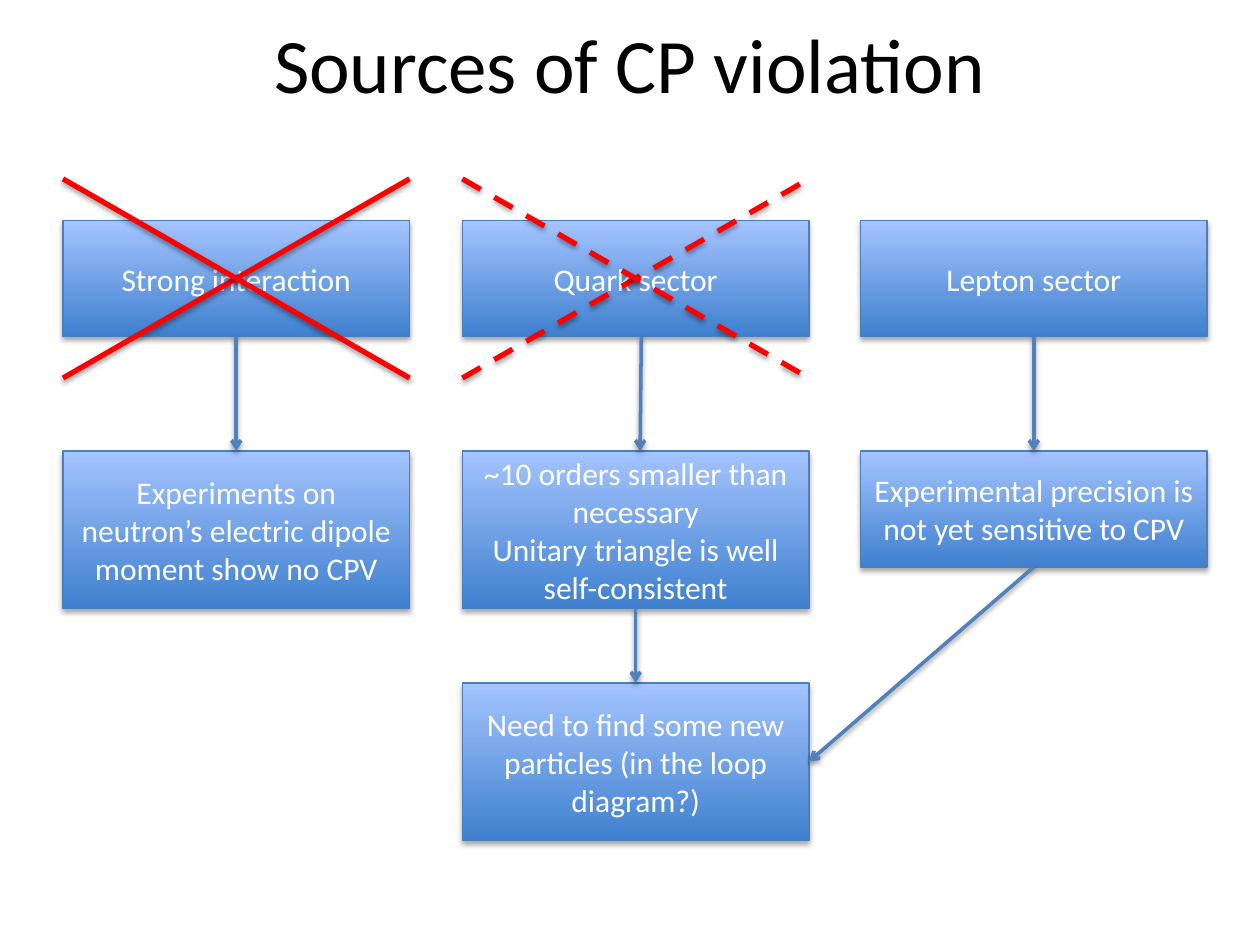
from dataclasses import dataclass

from lxml.etree import SubElement
from pptx import Presentation
from pptx.dml.color import RGBColor
from pptx.enum.dml import MSO_LINE
from pptx.enum.shapes import MSO_CONNECTOR, MSO_SHAPE
from pptx.enum.text import MSO_ANCHOR, PP_ALIGN
from pptx.oxml.ns import qn
from pptx.util import Inches, Pt

COLORS = {
    "text": "000000", "box_text": "FFFFFF", "box_bottom": "3F80CE",
    "box_top": "A4C4FF", "box_line": "4B7EBC", "arrow": "4F81BD",
    "cross": "FF0000", "shadow": "000000",
}
FONT = "Calibri"
BOX_W, SHORT_H, TALL_H = 2.75, 0.92, 1.25
LEFTS = [0.5, 3.67, 6.83]
ROWS = [1.75, 3.58, 5.42]
CROSS_TOP, CROSS_BOTTOM = 1.42, 3
TOP, BOTTOM, RIGHT = 0, 2, 3


@dataclass
class Box:
    name: str
    col: int
    row: int
    height: float
    lines: list[str]


@dataclass
class Arrow:
    start: str
    start_side: int
    end: str
    end_side: int


BOXES = [
    Box("strong", 0, 0, SHORT_H, ["Strong interaction"]),
    Box("quark", 1, 0, SHORT_H, ["Quark sector"]),
    Box("lepton", 2, 0, SHORT_H, ["Lepton sector"]),
    Box("too_small", 1, 1, TALL_H, ["~10 orders smaller than necessary",
                                    "Unitary triangle is well self-consistent"]),
    Box("precision", 2, 1, SHORT_H,
        ["Experimental precision is not yet sensitive to CPV"]),
    Box("dipole", 0, 1, TALL_H,
        ["Experiments on neutron’s electric dipole moment show no CPV"]),
    Box("new_particles", 1, 2, TALL_H,
        ["Need to find some new particles (in the loop diagram?)"]),
]
ARROWS = [
    Arrow("strong", BOTTOM, "dipole", TOP),
    Arrow("lepton", BOTTOM, "precision", TOP),
    Arrow("too_small", BOTTOM, "new_particles", TOP),
    Arrow("precision", BOTTOM, "new_particles", RIGHT),
]


def rgb(name: str) -> RGBColor:
    return RGBColor.from_string(COLORS[name])


def add_run(p, text: str, size: float, color: str) -> None:
    p.alignment = PP_ALIGN.CENTER
    r = p.add_run()
    r.text = text
    r.font.name, r.font.size = FONT, Pt(size)
    r.font.color.rgb = rgb(color)


def add_shadow(effects, alpha: int, distance: float) -> None:
    """Put a soft downward shadow into an a:effectLst; alpha in percent."""
    shadow = SubElement(effects, qn("a:outerShdw"), blurRad=str(Pt(3.1)),
                        dist=str(Pt(distance)), dir="5400000", rotWithShape="0")
    color = SubElement(shadow, qn("a:srgbClr"), val=COLORS["shadow"])
    SubElement(color, qn("a:alpha"), val=str(alpha * 1000))


def add_box(shapes, box: Box):
    sp = shapes.add_shape(MSO_SHAPE.RECTANGLE, Inches(LEFTS[box.col]),
                          Inches(ROWS[box.row]), Inches(BOX_W), Inches(box.height))
    sp.fill.gradient()
    sp.fill.gradient_angle = 90
    for stop, color in zip(sp.fill.gradient_stops, ("box_bottom", "box_top")):
        stop.color.rgb = rgb(color)
        stop.position = 0 if color == "box_bottom" else 1
    sp.line.color.rgb = rgb("box_line")
    sp.line.width = Pt(0.75)
    sp.shadow.inherit = False
    add_shadow(sp.element.spPr.find(qn("a:effectLst")), 35, 1.8)
    tf = sp.text_frame
    tf.word_wrap = True
    tf.vertical_anchor = MSO_ANCHOR.MIDDLE
    for i, line in enumerate(box.lines):
        p = tf.add_paragraph() if i else tf.paragraphs[0]
        add_run(p, line, 18, "box_text")
    return sp


def add_line(shapes, x1: float, y1: float, x2: float, y2: float, color: str,
             width: float, dash=None, arrow: bool = False):
    line = shapes.add_connector(MSO_CONNECTOR.STRAIGHT, Inches(x1), Inches(y1),
                                Inches(x2), Inches(y2))
    line.line.color.rgb = rgb(color)
    line.line.width = Pt(width)
    if dash:
        line.line.dash_style = dash
    sp_pr = line.element.spPr
    if arrow:
        SubElement(sp_pr.find(qn("a:ln")), qn("a:tailEnd"), type="arrow")
    add_shadow(SubElement(sp_pr, qn("a:effectLst")), 38, 1.6)
    return line


def add_cross(shapes, left: float, dash=None) -> None:
    group = shapes.add_group_shape().shapes
    for y1, y2 in ((CROSS_BOTTOM, CROSS_TOP), (CROSS_TOP, CROSS_BOTTOM)):
        add_line(group, left, y1, left + BOX_W, y2, "cross", 3, dash)


def main() -> None:
    prs = Presentation()
    prs.slide_width, prs.slide_height = Inches(10), Inches(7.5)
    s = prs.slides.add_slide(prs.slide_layouts[5])

    title = s.shapes.title
    title.left, title.top = Inches(0.5), Inches(0)
    title.width, title.height = Inches(9), Inches(1)
    title.text_frame.vertical_anchor = MSO_ANCHOR.MIDDLE
    add_run(title.text_frame.paragraphs[0], "Sources of CP violation", 44, "text")

    boxes = {box.name: add_box(s.shapes, box) for box in BOXES}
    for arrow in ARROWS:
        line = add_line(s.shapes, 0, 0, 0, 0, "arrow", 2, arrow=True)
        line.begin_connect(boxes[arrow.start], arrow.start_side)
        line.end_connect(boxes[arrow.end], arrow.end_side)
    # The quark arrow stands slightly right of its box centre
    add_line(s.shapes, 5.09, ROWS[0] + SHORT_H, 5.08, ROWS[1], "arrow", 2, arrow=True)

    add_cross(s.shapes, LEFTS[0])
    add_cross(s.shapes, LEFTS[1], MSO_LINE.DASH)
    prs.save("out.pptx")


if __name__ == "__main__":
    main()
